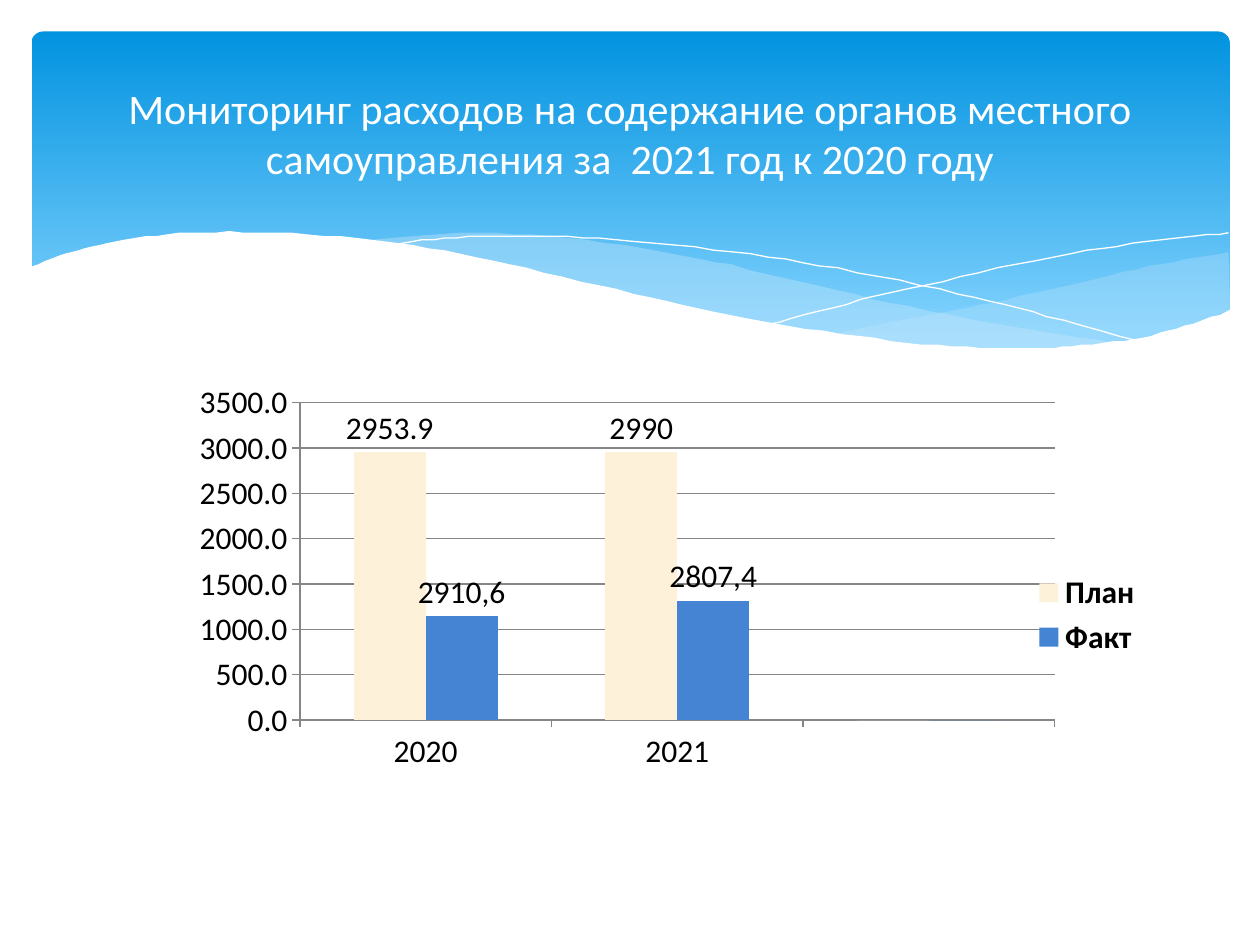
"""Build the slide on local government spending in 2021 against 2020."""
import lxml.etree
import pptx
import pptx.chart.data
import pptx.dml.color
import pptx.enum.chart
import pptx.enum.shapes
import pptx.enum.text
import pptx.oxml
import pptx.oxml.ns
import pptx.util

Pt = pptx.util.Pt
qn = pptx.oxml.ns.qn
HUES = {"top": "0293E0", "low": "83D3FE", "wave": "C6E7FC", "white": "FFFFFF",
        "text": "000000", "grid": "868686", "plan": "FDF2D9", "fact": "4584D3"}


def hue(name):
    return pptx.dml.color.RGBColor.from_string(HUES[name])


def curve(knots, steps=6):
    ends = [knots[0], *knots, knots[-1]]
    dots = [knots[0]]
    for a, b, c, d in zip(ends, ends[1:], ends[2:], ends[3:]):
        for step in range(1, steps + 1):
            t = step / steps
            dots.append(tuple(
                (2 * q + (r - p) * t + (2 * p - 5 * q + 4 * r - s) * t ** 2
                 + (3 * q - p - 3 * r + s) * t ** 3) / 2
                for p, q, r, s in zip(a, b, c, d)))
    return dots


deck = pptx.Presentation()
deck.slide_width, deck.slide_height = Pt(720), Pt(540)
slide = deck.slides.add_slide(deck.slide_layouts[6])
shapes = slide.shapes

band = shapes.add_shape(pptx.enum.shapes.MSO_SHAPE.ROUNDED_RECTANGLE,
                        Pt(18), Pt(18), Pt(684.7), Pt(194.4))
band.adjustments[0] = 0.034
band.shadow.inherit = False
band.line.fill.background()
band.fill.gradient()
band.fill.gradient_angle = 270
for stop, name, place in zip(band.fill.gradient_stops, ("top", "low"), (0, 0.9)):
    stop.color.rgb = hue(name)
    stop.position = place

right = curve([(702, 144), (663, 151), (620, 160.6), (561, 174.2), (476, 190.8)])
right += curve([(476, 190.8), (527, 197.3), (578, 200.2), (621.4, 198),
                (663, 190.8), (702.7, 177.8)])
left = curve([(643, 196.6), (581, 187.2), (508.3, 172.8), (453, 159.8),
              (399.6, 147.6), (334.8, 137.5), (273.6, 133.2), (206, 137.5)])
left += curve([(206, 137.5), (260.6, 146.2), (323.3, 159.8), (407.5, 178.6),
               (468, 190), (519.8, 197.3), (573, 200.2), (610.6, 199.4), (643, 196.6)])
fall = curve([(222.5, 140.4), (254.2, 136), (299.5, 134.6), (352, 136.8), (419, 144),
              (478.8, 153.4), (547.2, 167.8), (598.3, 180.7), (653, 195.8)])
rise = curve([(441.4, 185), (483.8, 173.5), (538.6, 160.6), (602, 146.9),
              (655.2, 138.2), (702, 133.2)])
front = curve([(703.4, 177), (676.8, 186.5), (647.3, 193.7), (612, 198), (582.5, 199.4),
               (535.7, 197.3), (481, 190.8), (417, 180), (362.2, 167.8), (301, 153.4),
               (244.8, 141.8), (195, 135.4), (139, 132.5), (95, 134), (61.2, 139),
               (37.4, 144.7), (16.6, 153.4)])
front += [(16.6, 237), (703.4, 237)]

for dots, name, alpha in ((right, "wave", 29), (left, "wave", 40), (fall, None, 100),
                          (rise, None, 100), (front, "white", 100)):
    pen = shapes.build_freeform(*dots[0], scale=Pt(1))
    pen.add_line_segments(dots[1:], close=name is not None)
    wave = pen.convert_to_shape()
    wave.shadow.inherit = False
    if name is None:
        wave.fill.background()
        wave.line.color.rgb = hue("white")
        wave.line.width = Pt(0)
        continue
    wave.line.fill.background()
    wave.fill.solid()
    wave.fill.fore_color.rgb = hue(name)
    if alpha < 100:
        paint = wave.fill._xPr.find(qn("a:solidFill"))[0]
        lxml.etree.SubElement(paint, qn("a:alpha"), val=str(alpha * 1000))

data = pptx.chart.data.CategoryChartData()
data.categories = ["2020", "2021", " "]
data.add_series("План", (2953.9, 2953, 0))
data.add_series("Факт", (1143.4, 1317.5, 0))
chart = shapes.add_chart(pptx.enum.chart.XL_CHART_TYPE.COLUMN_CLUSTERED,
                         Pt(68.4), Pt(211), Pt(591.8), Pt(280.8), data).chart
chart.has_title = False
chart.font.name = "Calibri"
chart.font.size = Pt(18)
chart.font.color.rgb = hue("text")

chart.has_legend = True
chart.legend.position = pptx.enum.chart.XL_LEGEND_POSITION.RIGHT
chart.legend.include_in_layout = False
chart.legend.font.bold = True
chart.legend.font.size = Pt(18)

scale = chart.value_axis
scale.minimum_scale, scale.maximum_scale, scale.major_unit = 0, 3500, 500
scale.tick_labels.number_format = "0.0"
scale.tick_labels.number_format_is_linked = False
scale.has_major_gridlines = True
for rule in (scale.format, scale.major_gridlines.format, chart.category_axis.format):
    rule.line.color.rgb = hue("grid")
    rule.line.width = Pt(0.75)
for axis in (scale, chart.category_axis):
    axis.major_tick_mark = pptx.enum.chart.XL_TICK_MARK.OUTSIDE

plot = chart.plots[0]
plot.gap_width, plot.overlap, plot.vary_by_categories = 150, 0, False
above = pptx.enum.chart.XL_LABEL_POSITION.OUTSIDE_END
looks = (("plan", "General", {1: "2990", 2: " "}),
         ("fact", "0.0", {0: "2910,6", 1: "2807,4", 2: " "}))
for row, (name, form, notes) in zip(plot.series, looks):
    row.format.fill.solid()
    row.format.fill.fore_color.rgb = hue(name)
    row.invert_if_negative = False
    tags = row.data_labels
    tags.show_value = True
    tags.number_format, tags.number_format_is_linked = form, False
    tags.position = above
    for spot, note in notes.items():
        tag = row.points[spot].data_label
        tag.text_frame.text = note
        tag.position = above

area = chart._chartSpace.chart.plotArea
old = area.find(qn("c:layout"))
if old is not None:
    area.remove(old)
layout = lxml.etree.Element(qn("c:layout"))
manual = lxml.etree.SubElement(layout, qn("c:manualLayout"))
for key, val in (("layoutTarget", "inner"), ("xMode", "edge"), ("yMode", "edge"),
                 ("x", "0.174"), ("y", "0.068"), ("w", "0.729"), ("h", "0.646")):
    lxml.etree.SubElement(manual, qn("c:" + key), val=val)
area.insert(0, layout)

frame = shapes.add_textbox(Pt(36), Pt(26.6), Pt(648), Pt(98.6)).text_frame
frame.word_wrap = True
frame.vertical_anchor = pptx.enum.text.MSO_ANCHOR.MIDDLE
frame.text = ("Мониторинг расходов на содержание органов местного "
              "самоуправления за  2021 год к 2020 году")
title = frame.paragraphs[0]
title.alignment = pptx.enum.text.PP_ALIGN.CENTER
font = title.runs[0].font
font.name, font.size = "Calibri", Pt(24)
font.color.rgb = hue("white")

deck.save("out.pptx")
